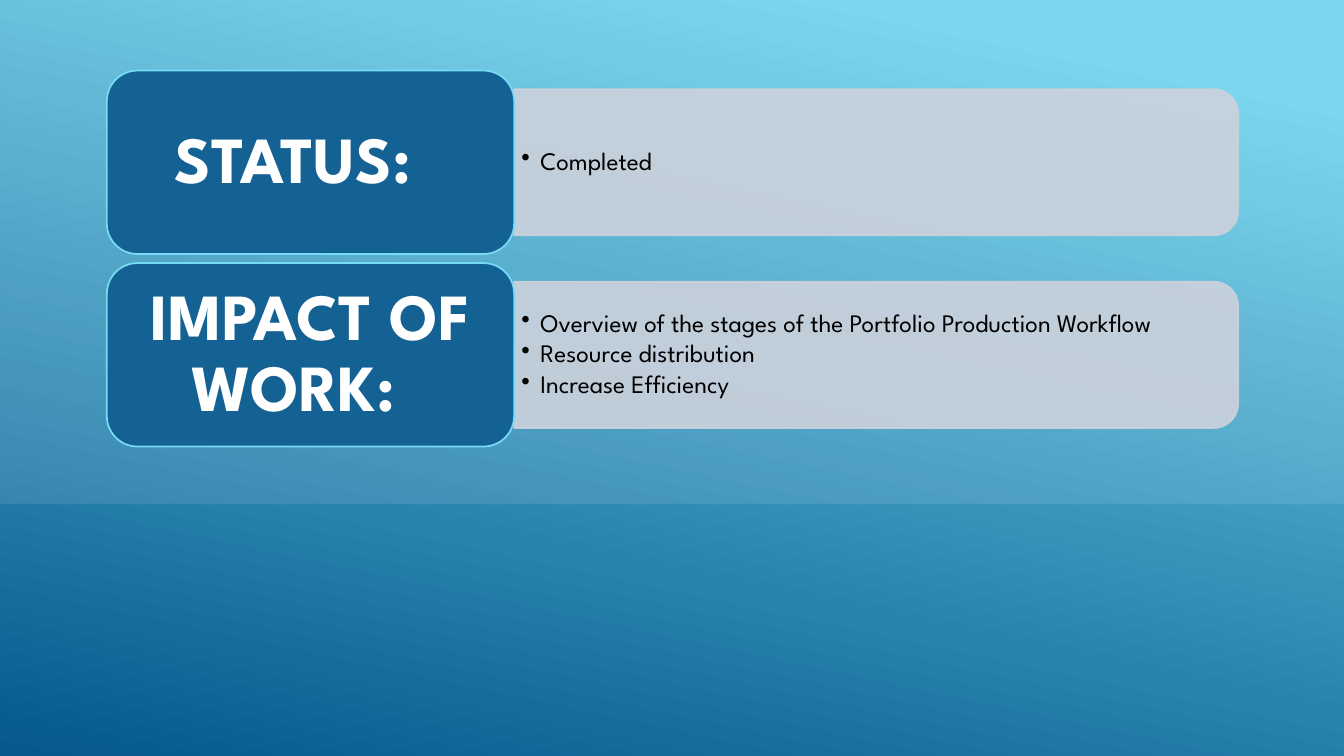
from lxml.etree import SubElement
from pptx import Presentation
from pptx.dml.color import RGBColor
from pptx.enum.shapes import MSO_SHAPE
from pptx.enum.text import MSO_ANCHOR, PP_ALIGN
from pptx.oxml.ns import qn
from pptx.util import Inches, Pt

WIDTH, HEIGHT = 13.33, 7.5
FONT = "League Spartan"
LEFT, TOP, LABEL_WIDTH, ROW_HEIGHT, ROW_PITCH = 1.06, 0.7, 4.04, 1.82, 1.91
PANEL_WIDTH, PANEL_HEIGHT = 7.18, 1.45
ROWS = [
    ("STATUS:  ", ["Completed"]),
    ("IMPACT OF WORK:  ", [
        "Overview of the stages of the Portfolio Production Workflow",
        "Resource distribution",
        "Increase Efficiency",
    ]),
]


def paint(color, hex_value):
    """Set a colour from a hex string."""
    color.rgb = RGBColor.from_string(hex_value)


def set_opacity(fill_parent, percent):
    """Give the solid colour below an element an opacity."""
    color = next(fill_parent.iter(qn("a:srgbClr")))
    SubElement(color, qn("a:alpha"), val=str(percent * 1000))


def add_block(page, kind, box, fill=None, line=None, opacity=100):
    """Add a preset shape with a flat fill and an optional outline."""
    block = page.shapes.add_shape(kind, *map(Inches, box))
    block.shadow.inherit = False
    if fill:
        block.fill.solid()
        paint(block.fill.fore_color, fill)
    if line:
        block.line.width = Pt(1.25)
        paint(block.line.color, line)
    else:
        block.line.fill.background()
    if opacity < 100:
        for color in list(block.element.spPr.iter(qn("a:solidFill"))):
            set_opacity(color, opacity)
    return block


def add_text(page, box, lines, size, color, insets, bulleted=False):
    """Add a middle-anchored text box, bulleted or centred and bold."""
    frame = page.shapes.add_textbox(*map(Inches, box)).text_frame
    frame.word_wrap = True
    frame.vertical_anchor = MSO_ANCHOR.MIDDLE
    frame.margin_left = frame.margin_right = Inches(insets[0])
    frame.margin_top = frame.margin_bottom = Inches(insets[1])
    for index, line in enumerate(lines):
        para = frame.paragraphs[0] if index == 0 else frame.add_paragraph()
        para.line_spacing = 0.9
        para.space_after = Pt(size * (0.15 if bulleted else 0.35))
        if bulleted:
            para.level = 1
            properties = para._p.get_or_add_pPr()
            properties.set("marL", str(Inches(0.19)))
            properties.set("indent", str(-Inches(0.19)))
            SubElement(properties, qn("a:buChar"), char="•")
        else:
            para.alignment = PP_ALIGN.CENTER
        span = para.add_run()
        span.text = line
        span.font.name = FONT
        span.font.size = Pt(size)
        span.font.bold = not bulleted
        paint(span.font.color, color)


def add_background(page):
    """Fill the page with a gradient and a pale band over its top two thirds."""
    backdrop = add_block(page, MSO_SHAPE.RECTANGLE, (0, 0, WIDTH, HEIGHT))
    backdrop.fill.gradient()
    backdrop.fill.gradient_angle = 360 - 102
    stops = zip(backdrop.fill.gradient_stops, (0.1, 1), ("6ED2EB", "06588E"))
    for stop, position, color in stops:
        stop.position = position
        paint(stop.color, color)
    band = add_block(page, MSO_SHAPE.SNIP_2_DIAG_RECTANGLE,
                     (0, 0, WIDTH, HEIGHT * 2 / 3), "FFFFFF", opacity=10)
    band.adjustments[0] = band.adjustments[1] = 0


def add_row(page, top, label, points):
    """Place one label with its panel of points to the right."""
    panel_left = LEFT + LABEL_WIDTH
    middle = top + ROW_HEIGHT / 2
    panel = add_block(
        page, MSO_SHAPE.ROUND_2_SAME_RECTANGLE,
        (panel_left + (PANEL_WIDTH - PANEL_HEIGHT) / 2, middle - PANEL_WIDTH / 2,
         PANEL_HEIGHT, PANEL_WIDTH), "CCD2DC", "CCD2DC", opacity=90)
    panel.rotation = 90
    add_text(page, (panel_left, middle - 0.655, 7.11, 1.31), points,
             18, "000000", (0.07, 0.04), bulleted=True)
    add_block(page, MSO_SHAPE.ROUNDED_RECTANGLE,
              (LEFT, top, LABEL_WIDTH, ROW_HEIGHT), "146194", "76DBF4")
    add_text(page, (LEFT + 0.09, top + 0.09, LABEL_WIDTH - 0.18, ROW_HEIGHT - 0.18),
             [label], 47, "FFFFFF", (0.2, 0.1))


def main():
    """Build and save the deck."""
    deck = Presentation()
    deck.slide_width, deck.slide_height = Inches(WIDTH), Inches(HEIGHT)
    page = deck.slides.add_slide(deck.slide_layouts[6])
    add_background(page)
    for index, (label, points) in enumerate(ROWS):
        add_row(page, TOP + index * ROW_PITCH, label, points)
    deck.save("out.pptx")


if __name__ == "__main__":
    main()
